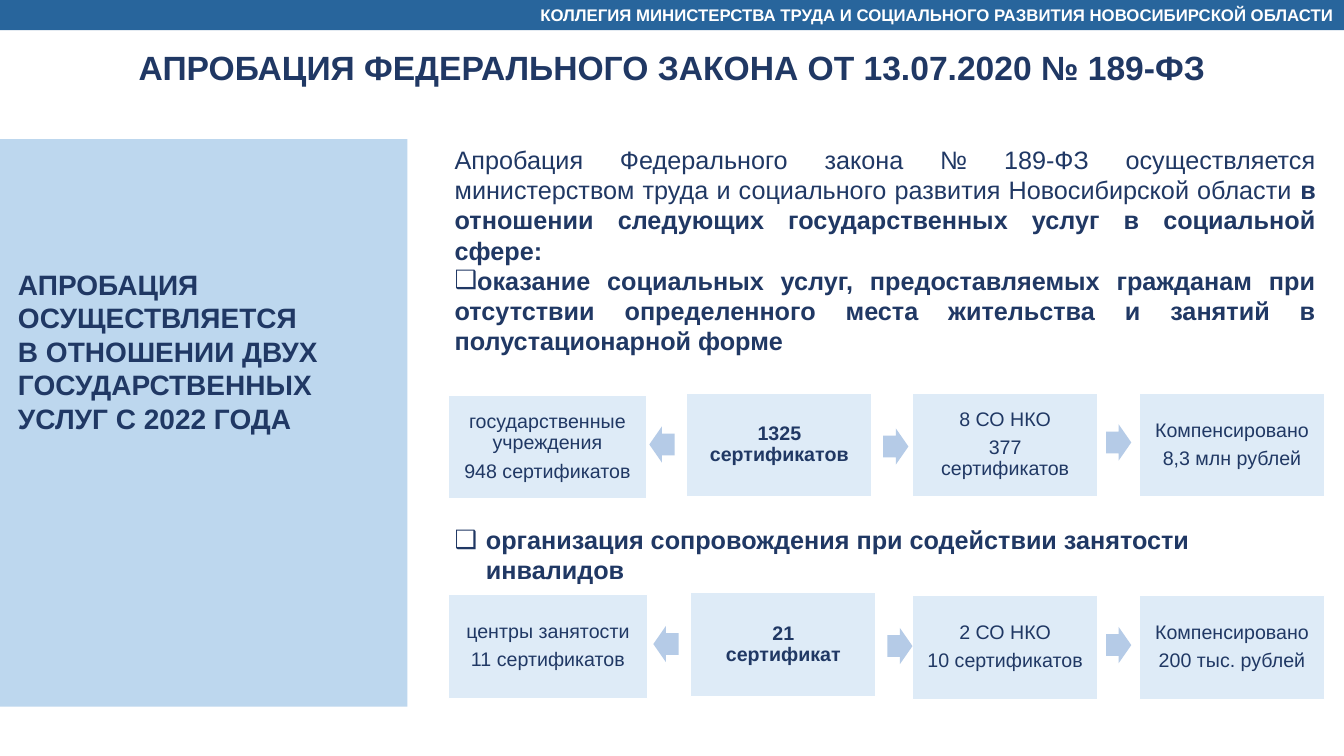
from dataclasses import dataclass

from lxml.etree import SubElement
from pptx import Presentation
from pptx.dml.color import RGBColor
from pptx.enum.shapes import MSO_SHAPE
from pptx.enum.text import MSO_ANCHOR, MSO_AUTO_SIZE, PP_ALIGN
from pptx.oxml.ns import qn
from pptx.util import Inches, Pt

NAVY = "203864"
WHITE = "FFFFFF"
CARD_FILL = "DEEBF7"
ARROW_FILL = "B5CBE7"


@dataclass
class Card:
    left: float
    top: float
    width: float
    lines: list[str]
    bold: bool = False
    space_after: float = 4.9


@dataclass
class Arrow:
    left: float
    top: float
    preset: MSO_SHAPE = MSO_SHAPE.RIGHT_ARROW


def rgb(color: str) -> RGBColor:
    return RGBColor.from_string(color)


def place(sp, left: float, top: float, width: float, height: float) -> None:
    sp.left, sp.top = Inches(left), Inches(top)
    sp.width, sp.height = Inches(width), Inches(height)


def add_block(slide, preset, left: float, top: float, width: float,
              height: float, fill: str, line: str | None = None):
    sp = slide.shapes.add_shape(preset, Inches(left), Inches(top),
                                Inches(width), Inches(height))
    sp.shadow.inherit = False
    sp.fill.solid()
    sp.fill.fore_color.rgb = rgb(fill)
    if line:
        sp.line.color.rgb = rgb(line)
        sp.line.width = Pt(1)
    else:
        sp.line.fill.background()
    return sp


def set_bullet(p, margin: float, indent: float, char: str | None) -> None:
    pPr = p._p.get_or_add_pPr()
    pPr.set("marL", str(Inches(margin)))
    pPr.set("indent", str(Inches(indent)))
    if char:
        SubElement(pPr, qn("a:buFont")).set("typeface", "Arial")
        SubElement(pPr, qn("a:buChar")).set("char", char)
    else:
        SubElement(pPr, qn("a:buNone"))


def format_text(tf, size: float, align: PP_ALIGN, color: str = NAVY,
                bold: bool = False, anchor: MSO_ANCHOR = MSO_ANCHOR.TOP,
                line_spacing: float = 1.0, space_after: float = 0) -> None:
    tf.word_wrap = True
    tf.auto_size = MSO_AUTO_SIZE.NONE
    tf.vertical_anchor = anchor
    for p in tf.paragraphs:
        p.alignment = align
        p.line_spacing = line_spacing
        p.space_before = Pt(0)
        p.space_after = Pt(space_after)
        for r in p.runs:
            r.font.name = "Arial"
            r.font.size = Pt(size)
            r.font.bold = bold
            r.font.color.rgb = rgb(color)


def add_card(slide, card: Card) -> None:
    sp = add_block(slide, MSO_SHAPE.RECTANGLE, card.left, card.top, card.width,
                   1.03, CARD_FILL, WHITE)
    tf = sp.text_frame
    tf.margin_left = tf.margin_right = Inches(0.12)
    tf.margin_top = tf.margin_bottom = Inches(0.12)
    tf.text = "\n".join(card.lines)
    format_text(tf, 14, PP_ALIGN.CENTER, bold=card.bold,
                anchor=MSO_ANCHOR.MIDDLE, line_spacing=0.9,
                space_after=card.space_after)


def add_arrow(slide, arrow: Arrow) -> None:
    sp = add_block(slide, arrow.preset, arrow.left, arrow.top, 0.25, 0.36,
                   ARROW_FILL)
    sp.adjustments[0] = 0.6
    sp.adjustments[1] = 0.5


CARDS = [
    # Services for the homeless
    Card(4.45, 3.92, 1.96, ["государственные учреждения", "948 сертификатов"]),
    Card(6.81, 3.9, 1.84, ["1325 сертификатов"], bold=True),
    Card(9.05, 3.9, 1.84, ["8 СО НКО", "377 сертификатов"]),
    Card(11.3, 3.9, 1.84, ["Компенсировано", "8,3 млн рублей"]),
    # Employment support
    Card(4.45, 5.9, 1.97, ["центры занятости", "11 сертификатов"]),
    Card(6.85, 5.88, 1.84, ["21", "сертификат"], bold=True, space_after=0),
    Card(9.05, 5.91, 1.84, ["2 СО НКО", "10 сертификатов"]),
    Card(11.3, 5.91, 1.84, ["Компенсировано", "200 тыс. рублей"]),
]

ARROWS = [
    Arrow(6.44, 4.23, MSO_SHAPE.LEFT_ARROW),
    Arrow(8.76, 4.25),
    Arrow(10.97, 4.21),
    Arrow(6.48, 6.21, MSO_SHAPE.LEFT_ARROW),
    Arrow(8.8, 6.23),
    Arrow(10.97, 6.22),
]


def main() -> None:
    prs = Presentation()
    prs.slide_width, prs.slide_height = Inches(13.33), Inches(7.5)
    slide = prs.slides.add_slide(prs.slide_layouts[3])
    title, intro, second = slide.placeholders

    # Header band
    band = add_block(slide, MSO_SHAPE.RECTANGLE, 0, 0, 13.33, 0.3, "28659C")
    band.text_frame.text = ("КОЛЛЕГИЯ МИНИСТЕРСТВА ТРУДА И СОЦИАЛЬНОГО "
                            "РАЗВИТИЯ НОВОСИБИРСКОЙ ОБЛАСТИ")
    format_text(band.text_frame, 12, PP_ALIGN.RIGHT, WHITE, bold=True,
                anchor=MSO_ANCHOR.MIDDLE)

    # Title
    place(title, 0, 0.42, 13.33, 0.5)
    title.text_frame.text = "АПРОБАЦИЯ ФЕДЕРАЛЬНОГО ЗАКОНА ОТ 13.07.2020 № 189-ФЗ"
    format_text(title.text_frame, 24, PP_ALIGN.CENTER, bold=True)

    # Left panel
    add_block(slide, MSO_SHAPE.RECTANGLE, 0, 1.38, 4.04, 5.63, "BDD7EE")
    panel = slide.shapes.add_textbox(Inches(0.08), Inches(2.6),
                                     Inches(3.31), Inches(1.78))
    panel.text_frame.text = ("АПРОБАЦИЯ ОСУЩЕСТВЛЯЕТСЯ\n"
                             "В ОТНОШЕНИИ ДВУХ ГОСУДАРСТВЕННЫХ УСЛУГ С 2022 ГОДА")
    format_text(panel.text_frame, 20, PP_ALIGN.LEFT, bold=True)

    # Introduction and first service
    place(intro, 4.41, 1.38, 8.74, 2.22)
    tf = intro.text_frame
    tf.text = ("Апробация Федерального закона № 189-ФЗ осуществляется "
               "министерством труда и социального развития "
               "Новосибирской области ")
    lead = tf.paragraphs[0]
    lead.add_run().text = ("в отношении следующих государственных услуг "
                           "в социальной сфере:")
    service = tf.add_paragraph()
    service.text = ("оказание социальных услуг, предоставляемых гражданам при "
                    "отсутствии определенного места жительства и занятий в "
                    "полустационарной форме")
    set_bullet(lead, 0, 0, None)
    set_bullet(service, 0, -0.31, "❑")
    format_text(tf, 18, PP_ALIGN.JUSTIFY, bold=True)
    lead.runs[0].font.bold = False

    # Second service
    place(second, 4.41, 5.15, 8.66, 0.71)
    tf = second.text_frame
    tf.text = "организация сопровождения при содействии занятости инвалидов"
    set_bullet(tf.paragraphs[0], 0.31, -0.31, "❑")
    format_text(tf, 18, PP_ALIGN.LEFT, bold=True)

    # Certificate flows
    for card in CARDS:
        add_card(slide, card)
    for arrow in ARROWS:
        add_arrow(slide, arrow)

    prs.save("out.pptx")


if __name__ == "__main__":
    main()
